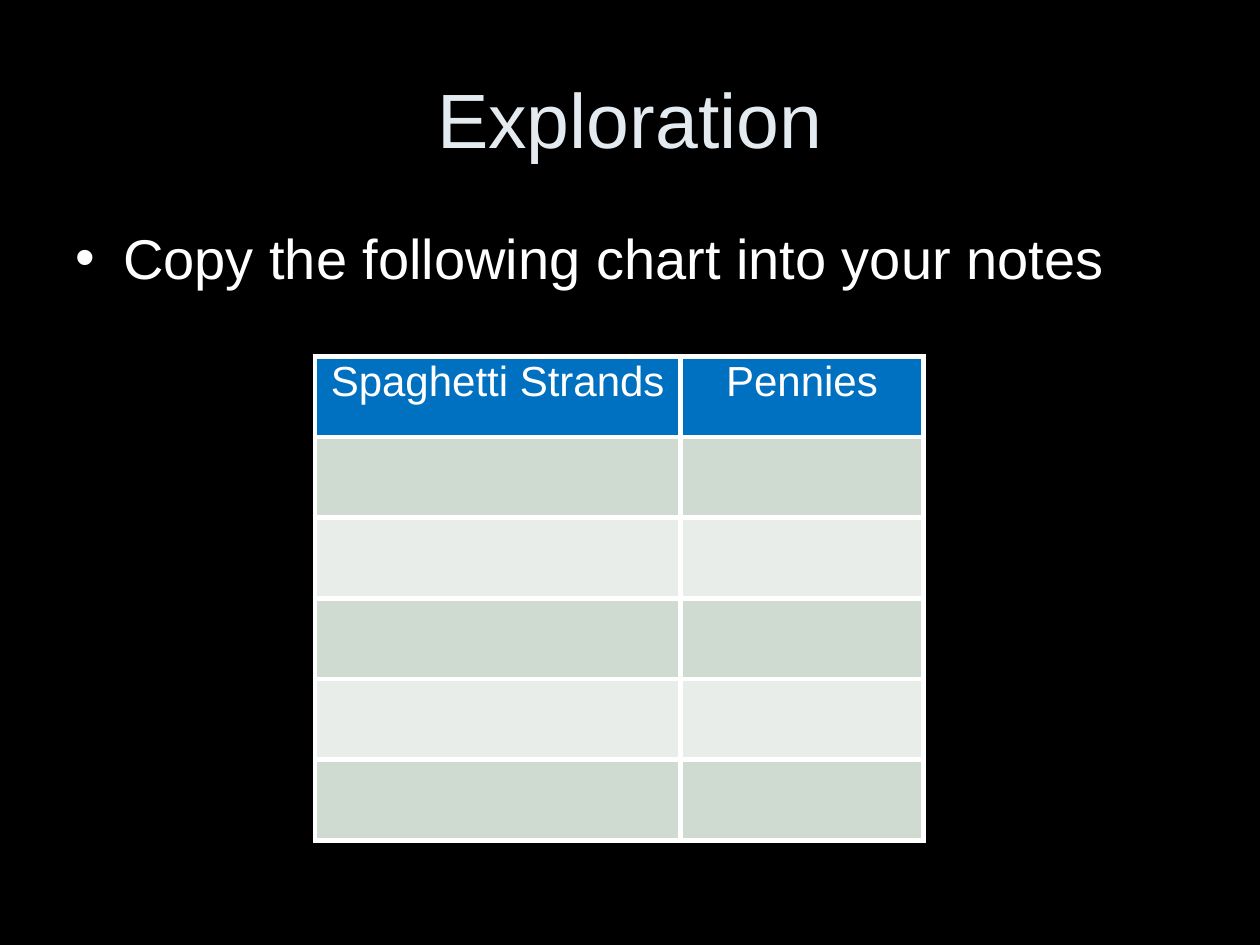
from lxml.etree import SubElement
from pptx import Presentation
from pptx.dml.color import RGBColor
from pptx.enum.text import MSO_ANCHOR, PP_ALIGN
from pptx.oxml.ns import qn
from pptx.util import Inches, Pt

WHITE = "FFFFFF"
HEADER_FILL = "0070C0"
BANDS = ("CFDAD0", "E9EDE9")
HEADERS = ("Spaghetti Strands", "Pennies")
COL_WIDTHS = (2.9, 1.93)
ROWS, ROW_HEIGHT = 6, 0.64
MARGIN = 0.05  # share of the slide's width


def rgb(value):
    return RGBColor.from_string(value)


def solid(fill, color):
    fill.solid()
    fill.fore_color.rgb = rgb(color)


def style(p, size, color, align=PP_ALIGN.LEFT):
    p.alignment = align
    for r in p.runs:
        r.font.name = "Arial"
        r.font.size = Pt(size)
        r.font.color.rgb = rgb(color)


def add_bullet(p, indent):
    pPr = p._p.get_or_add_pPr()
    pPr.set("marL", str(Inches(indent)))
    pPr.set("indent", str(-Inches(indent)))
    SubElement(pPr, qn("a:buFont"), typeface="Arial")
    SubElement(pPr, qn("a:buChar"), char="•")


def add_text(prs, s, text, top, height, anchor):
    """Add a box between the side margins; top and height are shares of the slide."""
    w, h = prs.slide_width, prs.slide_height
    box = s.shapes.add_textbox(int(w * MARGIN), int(h * top),
                               int(w * (1 - 2 * MARGIN)), int(h * height))
    tf = box.text_frame
    tf.word_wrap = True
    tf.vertical_anchor = anchor
    tf.text = text
    return tf.paragraphs[0]


def add_borders(cell, color, width):
    tcPr = cell._tc.get_or_add_tcPr()
    for side in ("lnL", "lnR", "lnT", "lnB"):
        ln = SubElement(tcPr, qn(f"a:{side}"), w=str(Pt(width)))
        fill = SubElement(ln, qn("a:solidFill"))
        SubElement(fill, qn("a:srgbClr"), val=color)


def add_notes_table(s, left, top):
    frame = s.shapes.add_table(ROWS, len(HEADERS), Inches(left), Inches(top),
                               Inches(sum(COL_WIDTHS)), Inches(ROWS * ROW_HEIGHT))
    table = frame.table
    for column, width in zip(table.columns, COL_WIDTHS):
        column.width = Inches(width)
    for i, row in enumerate(table.rows):
        row.height = Inches(ROW_HEIGHT)
        for cell in row.cells:
            add_borders(cell, WHITE, 3)
            solid(cell.fill, BANDS[(i - 1) % 2] if i else HEADER_FILL)
    for cell, text in zip(table.rows[0].cells, HEADERS):
        cell.text = text
        p = cell.text_frame.paragraphs[0]
        p.line_spacing = 0.9
        style(p, 24, WHITE, PP_ALIGN.CENTER)


def main():
    prs = Presentation()
    prs.slide_width, prs.slide_height = Inches(10), Inches(7.5)
    s = prs.slides.add_slide(prs.slide_layouts[6])
    solid(s.background.fill, "000000")

    title = add_text(prs, s, "Exploration", 0.04, 0.17, MSO_ANCHOR.MIDDLE)
    style(title, 44, "E3EBF1", PP_ALIGN.CENTER)

    task = add_text(prs, s, "Copy the following chart into your notes",
                    0.23, 0.66, MSO_ANCHOR.TOP)
    add_bullet(task, 0.38)
    style(task, 32, WHITE)

    add_notes_table(s, 2.5, 2.83)
    prs.save("out.pptx")


if __name__ == "__main__":
    main()
